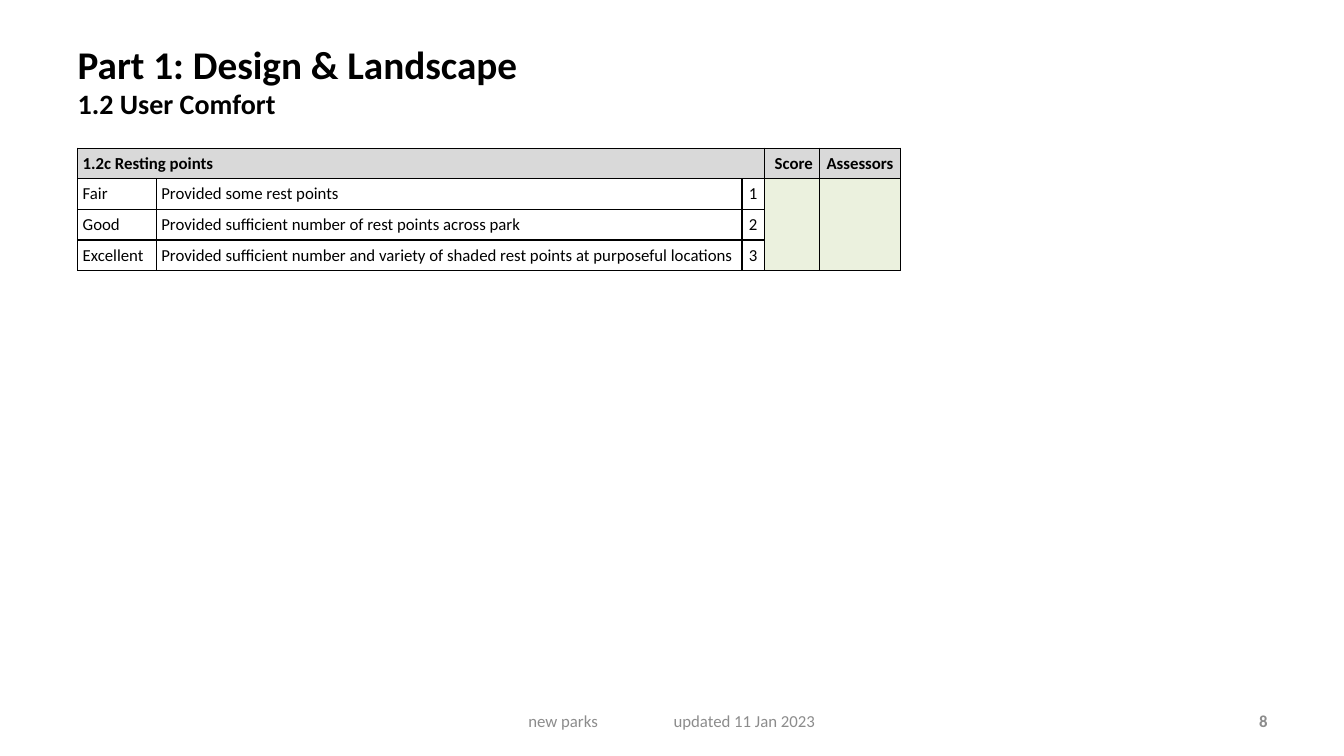
from pptx import Presentation
from pptx import util as u
from pptx.dml.color import RGBColor
from pptx.enum import text
from pptx.oxml import parse_xml
from pptx.oxml.ns import nsdecls

BLACK = RGBColor(0, 0, 0)
WHITE = RGBColor(0xFF, 0xFF, 0xFF)
GRAY = RGBColor(0x8C, 0x8C, 0x8C)
HEAD = RGBColor(0xD9, 0xD9, 0xD9)
GREEN = RGBColor(0xEB, 0xF1, 0xDE)
LEFT, CENTER, RIGHT = (text.PP_ALIGN.LEFT, text.PP_ALIGN.CENTER,
                       text.PP_ALIGN.RIGHT)

COLS = (0.78, 5.81, 0.22, 0.55, 0.8)
ROW = 0.3
ROWS = (
    ("1.2c Resting points", "", "", " Score", "Assessors"),
    ("Fair", "Provided some rest points", "1", "", ""),
    ("Good", "Provided sufficient number of rest points across park",
     "2", "", ""),
    ("Excellent", "Provided sufficient number and variety of shaded rest "
     "points at purposeful locations", "3", "", ""),
)


def style(para, size, color, bold=False, align=LEFT):
    para.alignment = align
    font = para.font
    font.name, font.size, font.bold = "Calibri", u.Pt(size), bold
    font.color.rgb = color


def add_title(slide, x, y, w, h):
    title = slide.shapes.title
    title.left, title.top, title.width, title.height = map(
        u.Inches, (x, y, w, h))
    frame = title.text_frame
    frame.auto_size = text.MSO_AUTO_SIZE.NONE
    frame.vertical_anchor = text.MSO_ANCHOR.MIDDLE
    frame.text = "Part 1: Design & Landscape\n1.2 User Comfort"
    for para, size in zip(frame.paragraphs, (28, 20)):
        style(para, size, BLACK, True)


def add_border(cell):
    props = cell._tc.get_or_add_tcPr()
    for side in "LRTB":
        props.append(parse_xml(
            f'<a:ln{side} {nsdecls("a")} w="12700"><a:solidFill>'
            f'<a:srgbClr val="{BLACK}"/></a:solidFill></a:ln{side}>'))


def fill_cell(cell, words, row, col):
    pad = u.Inches(0.05)
    cell.margin_left = cell.margin_right = pad
    cell.margin_top = cell.margin_bottom = pad if words else 0
    cell.vertical_anchor = text.MSO_ANCHOR.MIDDLE
    add_border(cell)
    cell.fill.solid()
    cell.fill.fore_color.rgb = (
        HEAD if row == 0 else GREEN if col > 2 else WHITE)
    if words:
        cell.text = words
    style(cell.text_frame.paragraphs[0], 12, BLACK, row == 0,
          CENTER if col > 1 else LEFT)


def add_scores(slide, x, y):
    table = slide.shapes.add_table(
        len(ROWS), len(COLS), u.Inches(x), u.Inches(y),
        u.Inches(sum(COLS)), u.Inches(ROW * len(ROWS))).table
    table.first_row = table.horz_banding = False
    for col, width in zip(table.columns, COLS):
        col.width = u.Inches(width)
    for r, words in enumerate(ROWS):
        for c, word in enumerate(words):
            fill_cell(table.cell(r, c), word, r, c)
    table.cell(0, 0).merge(table.cell(0, 2))
    for c in (3, 4):
        table.cell(1, c).merge(table.cell(3, c))


def add_note(slide, x, y, w, h, words, bold=False, align=LEFT):
    box = slide.shapes.add_textbox(*map(u.Inches, (x, y, w, h)))
    frame = box.text_frame
    frame.word_wrap = True
    frame.vertical_anchor = text.MSO_ANCHOR.MIDDLE
    frame.text = words
    para = frame.paragraphs[0]
    if "\t" in words:
        frame.margin_left = u.Inches(0.68)
        para._p.get_or_add_pPr().append(parse_xml(
            f'<a:tabLst {nsdecls("a")}>'
            f'<a:tab pos="{u.Inches(1.44)}" algn="l"/></a:tabLst>'))
    style(para, 12, GRAY, bold, align)


def main():
    deck = Presentation()
    deck.slide_width, deck.slide_height = u.Inches(13.33), u.Inches(7.5)
    slide = deck.slides.add_slide(deck.slide_layouts[5])
    add_title(slide, 0.67, 0.3, 10.36, 0.99)
    add_scores(slide, 0.77, 1.47)
    add_note(slide, 4.56, 6.95, 4.22, 0.4,
             "new parks\tupdated 11 Jan 2023")
    add_note(slide, 9.56, 6.95, 3.11, 0.4, "8", True, RIGHT)
    deck.save("out.pptx")


if __name__ == "__main__":
    main()
